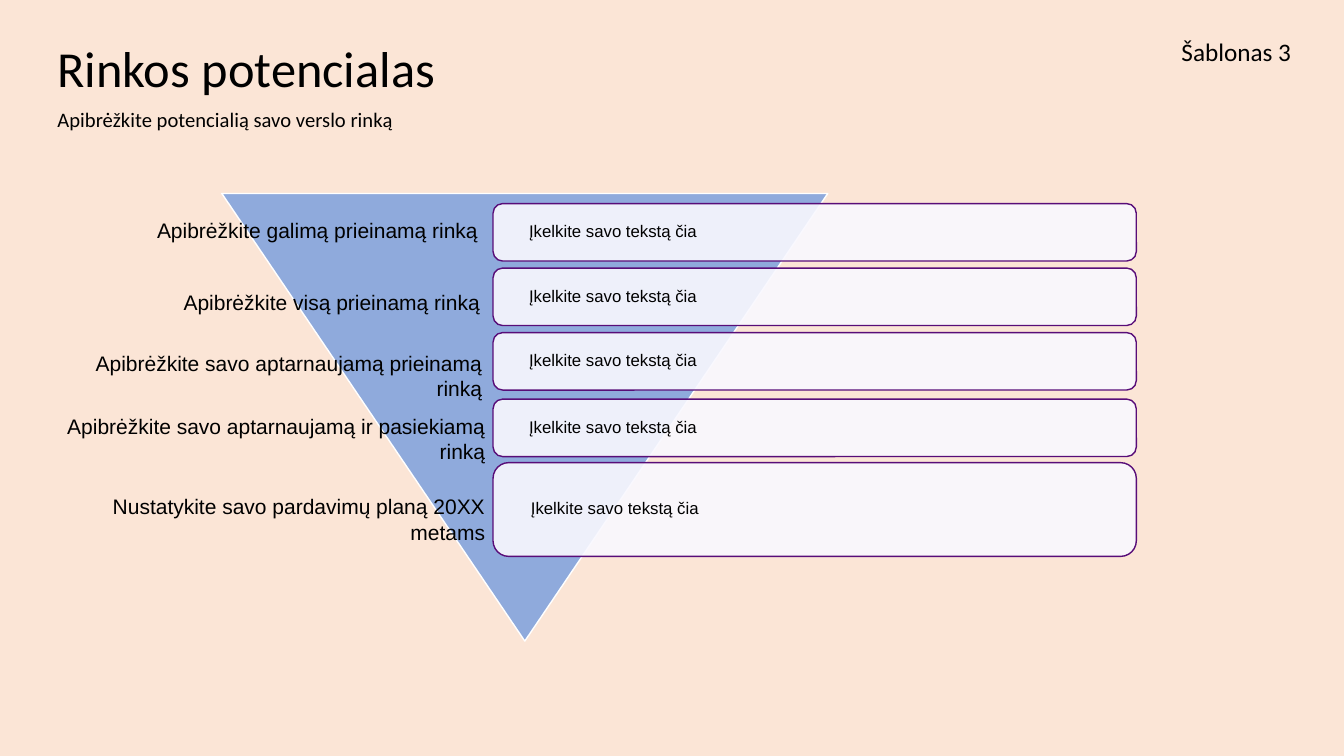
from dataclasses import dataclass
from typing import Any

from lxml.etree import SubElement as Sub
from pptx import Presentation
from pptx.dml.color import RGBColor as Rgb
from pptx.enum.shapes import MSO_SHAPE as Kind
from pptx.enum.text import MSO_ANCHOR as Anchor, MSO_AUTO_SIZE as Fit, PP_ALIGN as Align
from pptx.oxml.ns import qn
from pptx.util import Inches, Pt


@dataclass(frozen=True)
class Theme:
    back: str = "FBE5D6"
    funnel: str = "8FAADC"
    edge: str = "FFFFFF"
    card: str = "F9F8FE"
    rim: str = "580D78"
    ink: str = "000000"
    head: str = "Calibri"
    text: str = "Arial"
    title: float = 36
    lead: float = 14.7
    tag: float = 18
    label: float = 15
    entry: float = 12


@dataclass(frozen=True)
class Box:
    left: float
    top: float
    width: float
    height: float

    def spans(self) -> tuple:
        return tuple(Inches(n) for n in (self.left, self.top, self.width, self.height))


@dataclass(frozen=True)
class Step:
    label: str
    area: Box
    top: float
    height: float = 0.57


THEME = Theme()
ENTRY = "Įkelkite savo tekstą čia"
STEPS = [
    Step("Apibrėžkite galimą prieinamą rinką", Box(0.96, 2.11, 3.88, 0.35), 2.02),
    Step("Apibrėžkite visą prieinamą rinką", Box(0.5, 2.82, 4.36, 0.35), 2.66),
    Step("Apibrėžkite savo aptarnaujamą prieinamą rinką", Box(0.77, 3.43, 4.11, 0.61), 3.3),
    Step("Apibrėžkite savo aptarnaujamą ir pasiekiamą rinką", Box(0.19, 4.05, 4.72, 0.61), 3.96),
    Step("Nustatykite savo pardavimų planą 20XX metams", Box(0.77, 4.85, 4.14, 0.61), 4.59, 0.93),
]


def write(shape: Any, text: str, size: float, face: str, align: Any = Align.LEFT) -> Any:
    frame = shape.text_frame
    frame.text = text
    line = frame.paragraphs[0]
    line.alignment = align
    font = line.runs[0].font
    font.size = Pt(size)
    font.name = face
    font.color.rgb = Rgb.from_string(THEME.ink)
    return frame


def inset(frame: Any, left: float, rest: float) -> None:
    frame.margin_left = Inches(left)
    frame.margin_top = frame.margin_right = frame.margin_bottom = Inches(rest)
    frame.vertical_anchor = Anchor.MIDDLE
    frame.paragraphs[0].line_spacing = 0.9


def fill_holder(holder: Any, box: Box, text: str, size: float) -> Any:
    holder.left, holder.top, holder.width, holder.height = box.spans()
    frame = write(holder, text, size, THEME.head)
    frame.auto_size = Fit.NONE
    inset(frame, 0, 0)
    return frame


def add_form(slide: Any, kind: Any, box: Box, fill: str, line: str) -> Any:
    form = slide.shapes.add_shape(kind, *box.spans())
    form.shadow.inherit = False
    form.fill.solid()
    form.fill.fore_color.rgb = Rgb.from_string(fill)
    form.line.color.rgb = Rgb.from_string(line)
    form.line.width = Pt(1)
    return form


def add_card(slide: Any, step: Step) -> None:
    box = Box(4.89, step.top, 6.38, step.height)
    card = add_form(slide, Kind.ROUNDED_RECTANGLE, box, THEME.card, THEME.rim)
    tint = card.fill._xPr.find(qn("a:solidFill"))[0]
    Sub(tint, qn("a:alpha"), val="90000")
    inset(write(card, ENTRY, THEME.entry, THEME.text), 0.33, 0.05)


def add_label(slide: Any, step: Step) -> None:
    label = slide.shapes.add_textbox(*step.area.spans())
    frame = write(label, step.label, THEME.label, THEME.text, Align.RIGHT)
    frame.word_wrap = True
    frame.auto_size = Fit.SHAPE_TO_FIT_TEXT


def main() -> None:
    deck = Presentation()
    deck.slide_width, deck.slide_height = Inches(13.33), Inches(7.5)
    slide = deck.slides.add_slide(deck.slide_layouts[1])
    ground = slide.background.fill
    ground.solid()
    ground.fore_color.rgb = Rgb.from_string(THEME.back)

    title, body = slide.placeholders
    fill_holder(title, Box(0.57, 0.41, 12.2, 0.6), "Rinkos potencialas", THEME.title)
    lead = fill_holder(body, Box(0.57, 1.07, 12.2, 0.25),
                       "Apibrėžkite potencialią savo verslo rinką", THEME.lead)
    props = lead.paragraphs[0]._p.get_or_add_pPr()
    props.set("marL", "0")
    props.set("indent", "0")
    Sub(props, qn("a:buNone"))

    funnel = add_form(slide, Kind.ISOSCELES_TRIANGLE, Box(2.2, 1.92, 6.01, 4.44),
                      THEME.funnel, THEME.edge)
    funnel.rotation = 180
    for step in STEPS:
        add_card(slide, step)
    for step in STEPS:
        add_label(slide, step)

    tag = slide.shapes.add_textbox(*Box(11.62, 0.31, 1.3, 0.4).spans())
    frame = write(tag, "Šablonas 3", THEME.tag, THEME.head)
    frame.word_wrap = False
    frame.auto_size = Fit.SHAPE_TO_FIT_TEXT
    deck.save("out.pptx")


if __name__ == "__main__":
    main()
